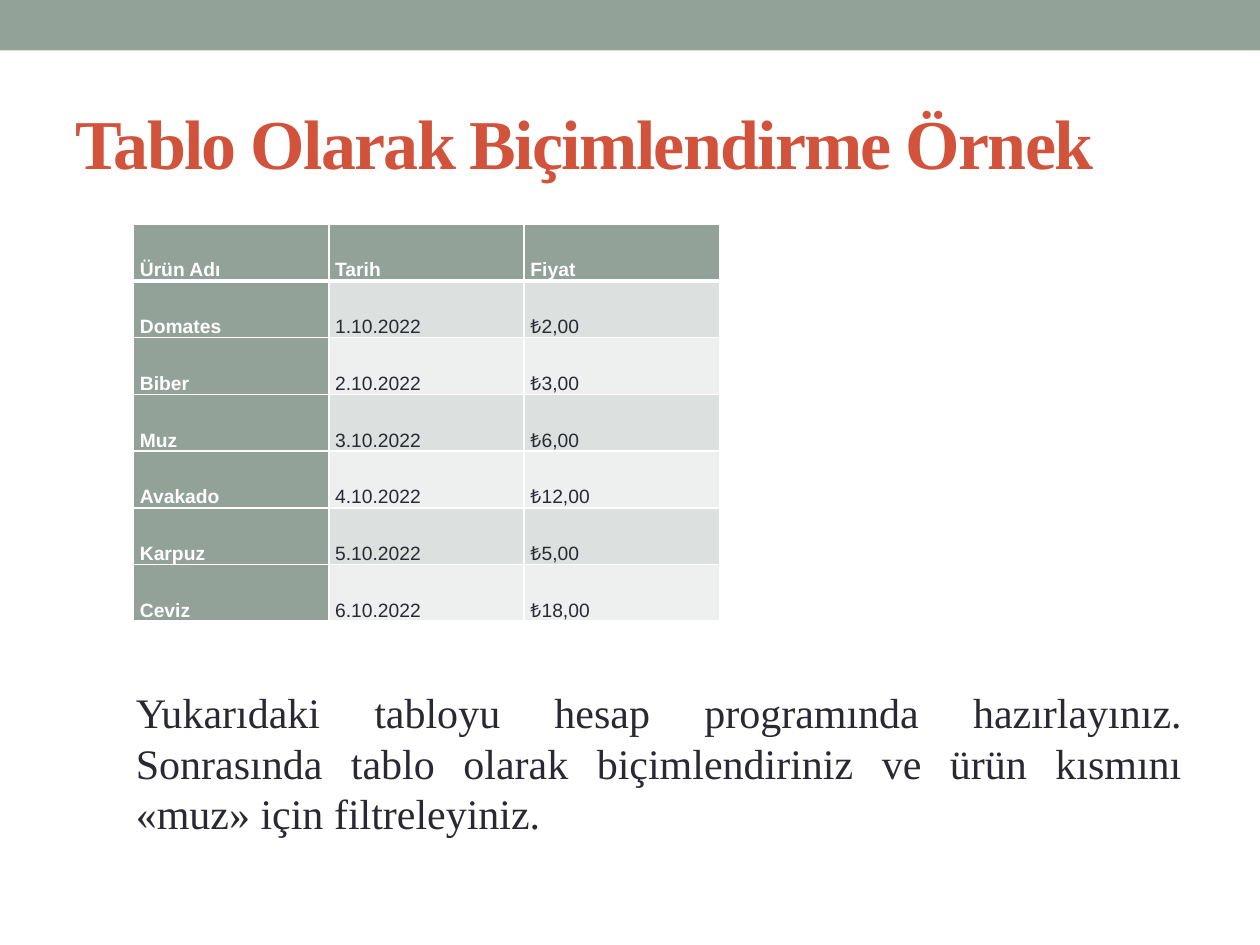
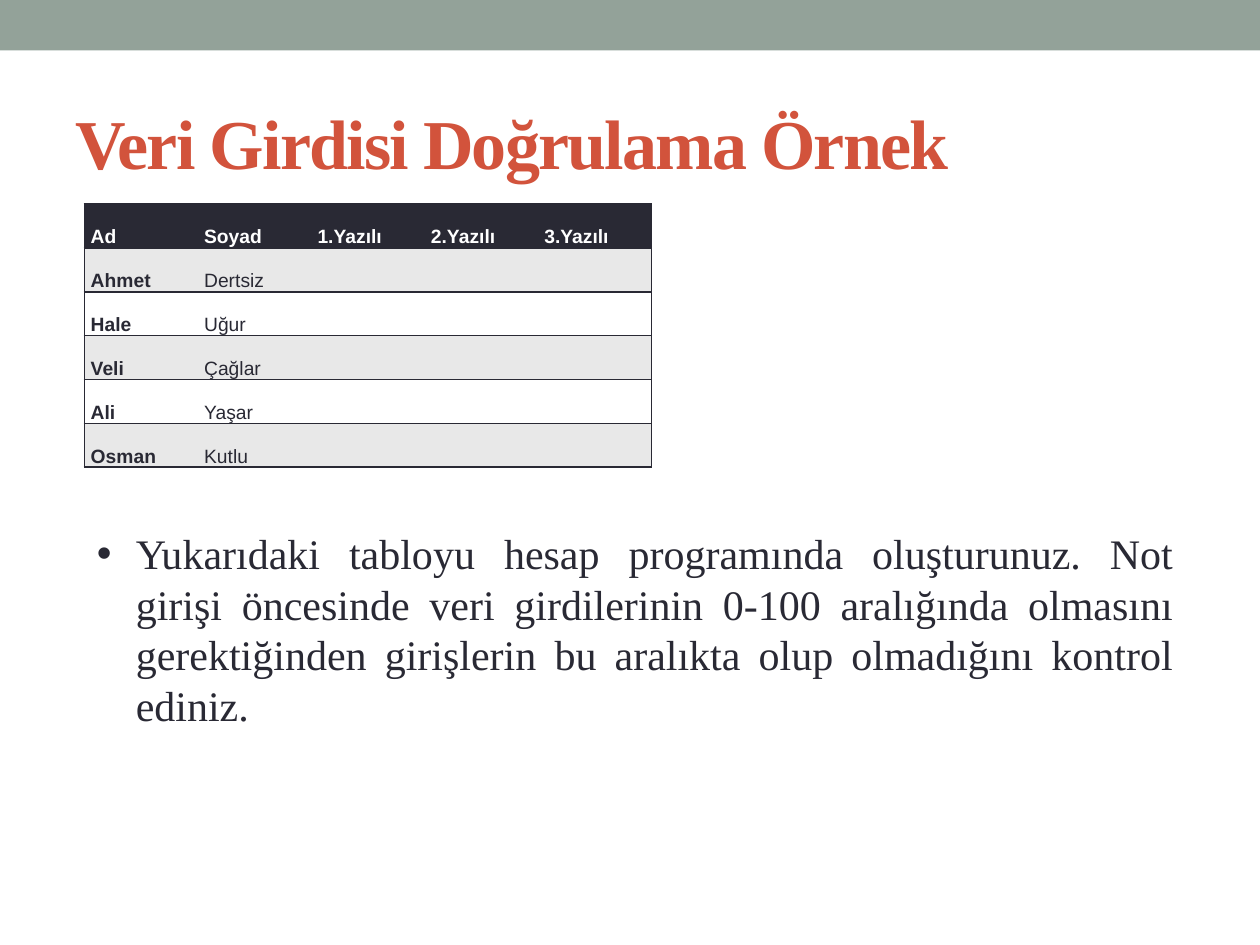
import lxml.etree
import pptx
import pptx.dml.color
import pptx.enum.shapes
import pptx.enum.text
import pptx.oxml.ns
import pptx.util

Inches = pptx.util.Inches
Anchor = pptx.enum.text.MSO_ANCHOR

SAGE, RUST, INK, WHITE = "93A299", "D2533C", "292934", "FFFFFF"
SERIF, SANS = "Times New Roman", "Arial"

PRODUCTS = {
    "at": (1.06, 1.78, 4.65, 3.15),
    "rows": [
        ("Ürün Adı", "Tarih", "Fiyat"),
        ("Domates", "1.10.2022", "₺2,00"),
        ("Biber", "2.10.2022", "₺3,00"),
        ("Muz", "3.10.2022", "₺6,00"),
        ("Avakado", "4.10.2022", "₺12,00"),
        ("Karpuz", "5.10.2022", "₺5,00"),
        ("Ceviz", "6.10.2022", "₺18,00"),
    ],
    "header_fill": SAGE,
    "label_fill": SAGE,
    "label_color": WHITE,
    "bands": ("DCE0DE", "EEF0EF"),
    "line": WHITE,
    "header_rule": 3,
    "inner_verticals": True,
}
GRADES = {
    "at": (0.67, 1.62, 4.5, 2.09),
    "rows": [
        ("Ad", "Soyad", "1.Yazılı", "2.Yazılı", "3.Yazılı"),
        ("Ahmet", "Dertsiz", "", "", ""),
        ("Hale", "Uğur", "", "", ""),
        ("Veli", "Çağlar", "", "", ""),
        ("Ali", "Yaşar", "", "", ""),
        ("Osman", "Kutlu", "", "", ""),
    ],
    "header_fill": INK,
    "label_fill": None,
    "label_color": INK,
    "bands": ("E8E8E8", WHITE),
    "line": INK,
    "header_rule": 1,
    "inner_verticals": False,
}
SLIDES = [
    {
        "title": "Tablo Olarak Biçimlendirme Örnek",
        "table": PRODUCTS,
        "task": "Yukarıdaki tabloyu hesap programında hazırlayınız. Sonrasında tablo "
                "olarak biçimlendiriniz ve ürün kısmını «muz» için filtreleyiniz.",
        "task_at": (0.98, 5.4, 8.5, 1.31),
        "bullet": False,
    },
    {
        "title": "Veri Girdisi Doğrulama Örnek",
        "table": GRADES,
        "task": "Yukarıdaki tabloyu hesap programında oluşturunuz. Not girişi öncesinde "
                "veri girdilerinin 0-100 aralığında olmasını gerektiğinden girişlerin "
                "bu aralıkta olup olmadığını kontrol ediniz.",
        "task_at": (0.67, 4.14, 8.74, 2.93),
        "bullet": True,
    },
]


def rgb(color):
    return pptx.dml.color.RGBColor.from_string(color)


def inches(lengths):
    return [Inches(length) for length in lengths]


def add_element(parent, tag, **attributes):
    element = lxml.etree.SubElement(parent, pptx.oxml.ns.qn(tag))
    for name, value in attributes.items():
        element.set(name, str(value))
    return element


def style_font(font, name, size, color, bold=False):
    font.name, font.size, font.bold = name, pptx.util.Pt(size), bold
    font.color.rgb = rgb(color)


def add_text(page, at, text, size, color, bold=False, anchor=Anchor.TOP):
    """Add a wrapped serif text box and return its paragraph."""
    frame = page.shapes.add_textbox(*inches(at)).text_frame
    frame.word_wrap = True
    frame.vertical_anchor = anchor
    frame.text = text
    para = frame.paragraphs[0]
    style_font(para.runs[0].font, SERIF, size, color, bold)
    return para


def add_band_and_title(page, title):
    band = page.shapes.add_shape(
        pptx.enum.shapes.MSO_SHAPE.RECTANGLE, *inches((0, 0, 10, 0.4)))
    band.shadow.inherit = False
    band.fill.solid()
    band.fill.fore_color.rgb = rgb(SAGE)
    band.line.fill.background()
    para = add_text(page, (0.5, 0.58, 9, 1.08), title, 40, RUST, True, Anchor.MIDDLE)
    para.runs[0].font._element.set("spc", "-100")


def add_task(page, at, text, bullet):
    para = add_text(page, at, text, 24, INK)
    para.alignment = pptx.enum.text.PP_ALIGN.JUSTIFY
    if bullet:
        properties = para._p.get_or_add_pPr()
        properties.set("marL", str(Inches(0.31)))
        properties.set("indent", str(-Inches(0.31)))
        add_element(properties, "a:buFont", typeface=SANS)
        add_element(properties, "a:buChar", char="•")


def add_borders(cell, color, widths):
    """Draw left, right, top and bottom lines; a width of 0 means no line."""
    properties = cell._tc.get_or_add_tcPr()
    for side, width in zip("LRTB", widths):
        line = add_element(properties, f"a:ln{side}", w=pptx.util.Pt(width))
        if width:
            add_element(add_element(line, "a:solidFill"), "a:srgbClr", val=color)
        else:
            add_element(line, "a:noFill")


def fill_cell(cell, look, row, column, text):
    header, label = row == 0, column == 0
    last_column = column == len(look["rows"][0]) - 1
    inner = int(look["inner_verticals"])
    rule = look["header_rule"]
    add_borders(cell, look["line"], (
        1 if label else inner,
        1 if last_column else inner,
        rule if row == 1 else 1,
        rule if header else 1,
    ))

    fill = look["bands"][(row - 1) % 2]
    color = INK
    if header:
        fill, color = look["header_fill"], WHITE
    elif label:
        fill, color = look["label_fill"] or fill, look["label_color"]
    cell.fill.solid()
    cell.fill.fore_color.rgb = rgb(fill)

    cell.margin_left = cell.margin_right = Inches(0.05)
    cell.margin_top = cell.margin_bottom = 0
    cell.vertical_anchor = Anchor.BOTTOM
    cell.text_frame.text = text
    para = cell.text_frame.paragraphs[0]
    para.line_spacing = 1.15
    style_font(para.font, SANS, 11, color, header or label)
    for span in para.runs:
        style_font(span.font, SANS, 11, color, header or label)


def add_styled_table(page, look):
    rows = look["rows"]
    left, top, width, height = look["at"]
    table = page.shapes.add_table(
        len(rows), len(rows[0]), *inches((left, top, width, height))).table
    for column in table.columns:
        column.width = Inches(width / len(rows[0]))
    for row, texts in enumerate(rows):
        table.rows[row].height = Inches(height / len(rows))
        for column, text in enumerate(texts):
            fill_cell(table.cell(row, column), look, row, column, text)


def main():
    deck = pptx.Presentation()
    deck.slide_width, deck.slide_height = Inches(10), Inches(7.5)
    for content in SLIDES:
        page = deck.slides.add_slide(deck.slide_layouts[6])
        add_band_and_title(page, content["title"])
        add_styled_table(page, content["table"])
        add_task(page, content["task_at"], content["task"], content["bullet"])
    deck.save("out.pptx")


if __name__ == "__main__":
    main()
